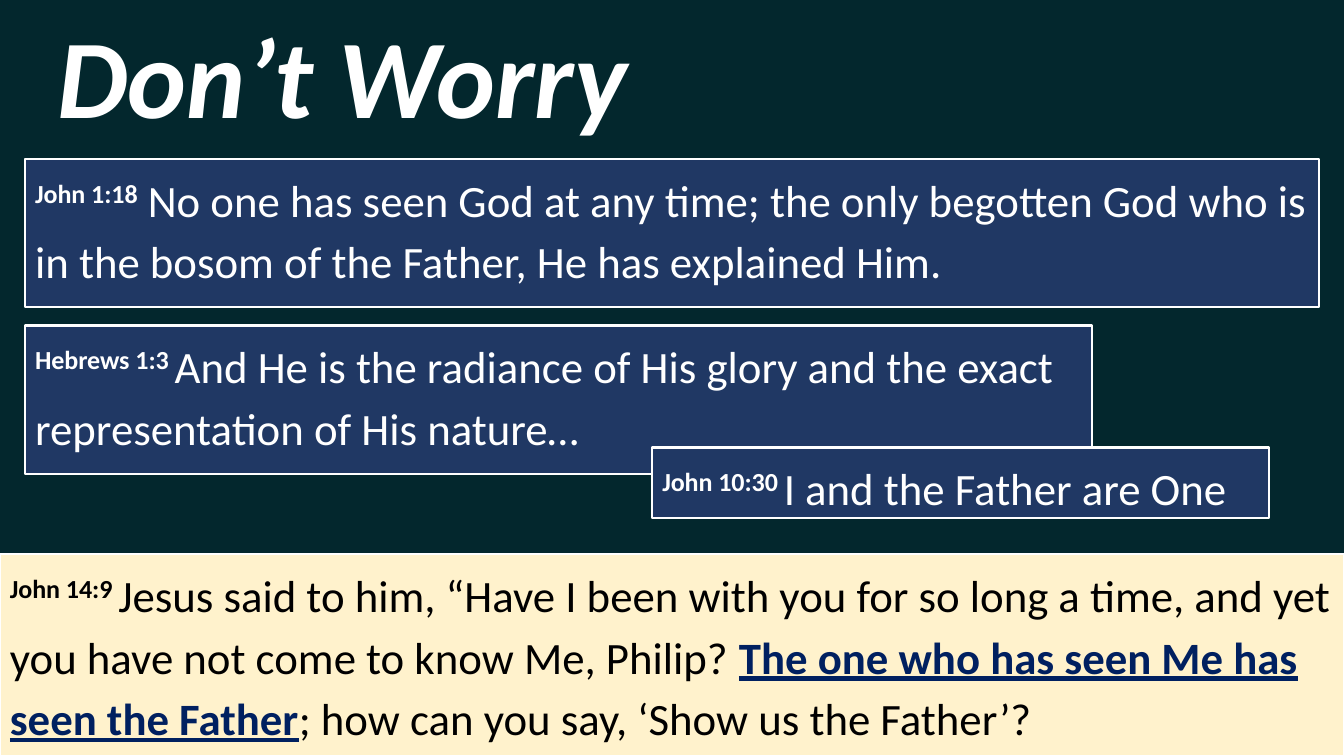
from pptx import Presentation
from pptx.dml.color import RGBColor
from pptx.enum.shapes import MSO_SHAPE
from pptx.enum.text import MSO_ANCHOR, PP_ALIGN
from pptx.util import Inches, Pt

RECT, ROUNDED = MSO_SHAPE.RECTANGLE, MSO_SHAPE.ROUNDED_RECTANGLE
TOP, MIDDLE = MSO_ANCHOR.TOP, MSO_ANCHOR.MIDDLE
LEFT, CENTER = PP_ALIGN.LEFT, PP_ALIGN.CENTER

THEME = {
    "font": "Calibri",
    "title_size": Pt(80),
    "verse_size": Pt(32),
    "background": RGBColor(0x03, 0x27, 0x2D),
    "navy": RGBColor(0x20, 0x38, 0x64),
    "cream": RGBColor(0xFF, 0xF2, 0xCC),
    "white": RGBColor(0xFF, 0xFF, 0xFF),
    "black": RGBColor(0, 0, 0),
    "emphasis": RGBColor(0x00, 0x20, 0x60),
}


def add_box(s, shape, box, anchor, align, size, color):
    sp = s.shapes.add_shape(shape, *[Inches(v) for v in box])
    sp.shadow.inherit = False
    tf = sp.text_frame
    tf.word_wrap = True
    tf.vertical_anchor = anchor
    p = tf.paragraphs[0]
    p.alignment = align
    p.font.name = THEME["font"]
    p.font.size = size
    p.font.color.rgb = THEME[color]
    return sp, p


def add_run(p, text, bold=False):
    r = p.add_run()
    r.text = text
    r.font.bold = bold
    return r


prs = Presentation()
prs.slide_width, prs.slide_height = Inches(13.33), Inches(7.5)
s = prs.slides.add_slide(prs.slide_layouts[6])
s.background.fill.solid()
s.background.fill.fore_color.rgb = THEME["background"]

VERSES = [
    ((0, 5.5, 13.33, 2), "cream", "black", "John 14:9 ", [
        ("Jesus said to him, “Have I been with you for so long a time, and "
         "yet you have not come to know Me, Philip? ", False),
        ("The one who has seen Me has seen the Father", True),
        ("; how can you say, ‘Show us the Father’?", False)]),
    ((0.25, 1.58, 12.83, 1.47), "navy", "white", "John 1:18", [
        (" No one has seen God at any time; the only begotten God who is "
         "in the bosom of the Father, He has explained Him.", False)]),
    ((0.25, 3.23, 10.58, 1.47), "navy", "white", "Hebrews 1:3 ", [
        ("And He is the radiance of His glory and the exact "
         "representation of His nature…", False)]),
    ((6.47, 4.44, 6.12, 0.7), "navy", "white", "John 10:30 ", [
        ("I and the Father are One", False)]),
]

for box, fill, color, reference, parts in VERSES:
    sp, p = add_box(s, RECT, box, TOP, LEFT, THEME["verse_size"], color)
    sp.fill.solid()
    sp.fill.fore_color.rgb = THEME[fill]
    sp.line.color.rgb = THEME["white"]
    sp.line.width = Pt(1.5)
    p.line_spacing = 1.15
    p.space_after = Pt(8)
    r = add_run(p, reference, bold=True)
    r.font._element.set("baseline", "30000")
    for text, emphasized in parts:
        r = add_run(p, text, bold=emphasized)
        if emphasized:
            r.font.underline = True
            r.font.color.rgb = THEME["emphasis"]

sp, p = add_box(s, ROUNDED, (0.19, 0.14, 6.67, 1.18), MIDDLE, CENTER,
                THEME["title_size"], "white")
sp.fill.background()
sp.line.fill.background()
p.font.italic = True
add_run(p, "Don’t Worry ", bold=True)

prs.save("out.pptx")
